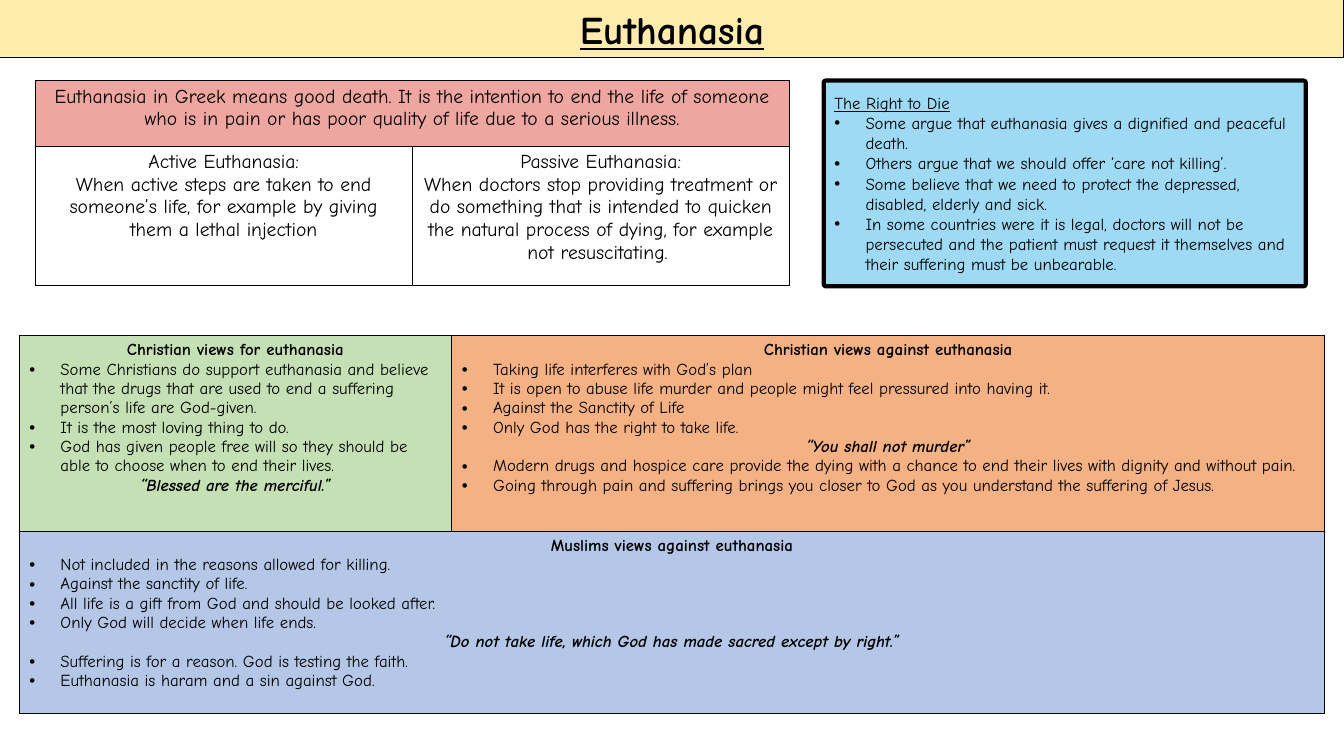
import pptx
import pptx.util
import pptx.dml.color
import pptx.enum.shapes
import pptx.enum.text
import pptx.oxml.ns
import lxml.etree

Inches = pptx.util.Inches
Pt = pptx.util.Pt
RGBColor = pptx.dml.color.RGBColor
ALIGN = pptx.enum.text.PP_ALIGN
ANCHOR = pptx.enum.text.MSO_ANCHOR
SHAPE = pptx.enum.shapes.MSO_SHAPE

FONT = "Comic Neue"
BLACK = RGBColor(0x00, 0x00, 0x00)
WHITE = RGBColor(0xFF, 0xFF, 0xFF)
YELLOW = RGBColor(0xFF, 0xEB, 0xAB)
PINK = RGBColor(0xEE, 0xA7, 0xA0)
SKY = RGBColor(0x9F, 0xDA, 0xF5)
GREEN = RGBColor(0xC5, 0xE0, 0xB4)
ORANGE = RGBColor(0xF4, 0xB1, 0x83)
BLUE = RGBColor(0xB4, 0xC7, 0xE7)

STYLES = {
    "title": dict(center=True, bold=True, underline=True),
    "label": dict(underline=True),
    "plain": dict(center=True),
    "heading": dict(center=True, bold=True),
    "quote": dict(center=True, bold=True, italic=True),
    "point": dict(bullet=True),
}

TITLE = [("title", "Euthanasia")]

RIGHT_TO_DIE = [
    ("label", "The Right to Die"),
    ("point", "Some argue that euthanasia gives a dignified and peaceful death."),
    ("point", "Others argue that we should offer ‘care not killing’."),
    ("point", "Some believe that we need to protect the depressed, disabled, elderly and sick."),
    ("point", "In some countries were it is legal, doctors will not be persecuted and the patient "
              "must request it themselves and their suffering must be unbearable."),
]

DEFINITIONS = {
    "place": (0.35, 0.8),
    "columns": (3.74, 3.74),
    "rows": (0.65, 1.38),
    "size": 14,
    "wide_row": 0,
    "cells": [
        (0, 0, PINK, [
            ("plain", "Euthanasia in Greek means good death. It is the intention to end the life of "
                      "someone who is in pain or has poor quality of life due to a serious illness."),
        ]),
        (1, 0, WHITE, [
            ("plain", "Active Euthanasia:"),
            ("plain", "When active steps are taken to end someone’s life, for example by giving "
                      "them a lethal injection"),
        ]),
        (1, 1, WHITE, [
            ("plain", "Passive Euthanasia:"),
            ("plain", "When doctors stop providing treatment or do something that is intended to "
                      "quicken the natural process of dying, for example not resuscitating. "),
        ]),
    ],
}

VIEWS = {
    "place": (0.19, 3.33),
    "columns": (4.29, 8.66),
    "rows": (1.94, 1.81),
    "size": 12,
    "wide_row": 1,
    "cells": [
        (0, 0, GREEN, [
            ("heading", "Christian views for euthanasia"),
            ("point", "Some Christians do support euthanasia and believe that the drugs that are "
                      "used to end a suffering person’s life are God-given."),
            ("point", "It is the most loving thing to do."),
            ("point", "God has given people free will so they should be able to choose when to end "
                      "their lives."),
            ("quote", "“Blessed are the merciful.”"),
        ]),
        (0, 1, ORANGE, [
            ("heading", "Christian views against euthanasia"),
            ("point", "Taking life interferes with God’s plan"),
            ("point", "It is open to abuse life murder and people might feel pressured into having it."),
            ("point", "Against the Sanctity of Life"),
            ("point", "Only God has the right to take life."),
            ("quote", "“You shall not murder”"),
            ("point", "Modern drugs and hospice care provide the dying with a chance to end their "
                      "lives with dignity and without pain."),
            ("point", "Going through pain and suffering brings you closer to God as you understand "
                      "the suffering of Jesus."),
        ]),
        (1, 0, BLUE, [
            ("heading", "Muslims views against euthanasia"),
            ("point", "Not included in the reasons allowed for killing."),
            ("point", "Against the sanctity of life."),
            ("point", "All life is a gift from God and should be looked after."),
            ("point", "Only God will decide when life ends."),
            ("quote", "“Do not take life, which God has made sacred except by right.”"),
            ("point", "Suffering is for a reason. God is testing the faith."),
            ("point", "Euthanasia is haram and a sin against God."),
        ]),
    ],
}


def add_element(parent, tag, **attributes):
    return lxml.etree.SubElement(parent, pptx.oxml.ns.qn(tag), **attributes)


def write(frame, lines, size):
    frame.word_wrap = True
    frame.text = "\n".join(text for _, text in lines)
    for para, (kind, _) in zip(frame.paragraphs, lines):
        style = STYLES[kind]
        para.alignment = ALIGN.CENTER if style.get("center") else ALIGN.LEFT
        if style.get("bullet"):
            properties = para._p.get_or_add_pPr()
            indent = Inches(0.31)
            properties.set("marL", str(indent))
            properties.set("indent", str(-indent))
            add_element(properties, "a:buFont", typeface="Arial")
            add_element(properties, "a:buChar", char="•")
        for span in para.runs:
            span.font.name = FONT
            span.font.size = Pt(size)
            span.font.color.rgb = BLACK
            span.font.bold = style.get("bold", False)
            span.font.italic = style.get("italic", False)
            span.font.underline = style.get("underline", False)


def add_box(page, kind, place, fill, line_width, lines, size, anchor):
    box = page.shapes.add_shape(kind, *map(Inches, place))
    box.shadow.inherit = False
    box.fill.solid()
    box.fill.fore_color.rgb = fill
    box.line.color.rgb = BLACK
    box.line.width = Pt(line_width)
    box.text_frame.vertical_anchor = anchor
    write(box.text_frame, lines, size)
    return box


def add_borders(cell):
    properties = cell._tc.get_or_add_tcPr()
    for index, side in enumerate(("a:lnL", "a:lnR", "a:lnT", "a:lnB")):
        line = lxml.etree.Element(pptx.oxml.ns.qn(side), w=str(Pt(1)))
        add_element(add_element(line, "a:solidFill"), "a:srgbClr", val=str(BLACK))
        properties.insert(index, line)


def add_grid(page, grid):
    columns, rows = grid["columns"], grid["rows"]
    place = (*grid["place"], sum(columns), sum(rows))
    table = page.shapes.add_table(len(rows), len(columns), *map(Inches, place)).table
    table.first_row = False
    table.horz_banding = False
    for column, width in zip(table.columns, columns):
        column.width = Inches(width)
    for row, height in zip(table.rows, rows):
        row.height = Inches(height)
    wide = grid["wide_row"]
    table.cell(wide, 0).merge(table.cell(wide, len(columns) - 1))
    for row, column, fill, lines in grid["cells"]:
        cell = table.cell(row, column)
        cell.fill.solid()
        cell.fill.fore_color.rgb = fill
        write(cell.text_frame, lines, grid["size"])
    for cell in table.iter_cells():
        add_borders(cell)


def main():
    deck = pptx.Presentation()
    deck.slide_width = Inches(13.33)
    deck.slide_height = Inches(7.5)
    page = deck.slides.add_slide(deck.slide_layouts[6])
    banner = add_box(page, SHAPE.RECTANGLE, (0, 0, 13.33, 0.57), YELLOW, 0.75, TITLE, 28, ANCHOR.TOP)
    banner.text_frame.auto_size = pptx.enum.text.MSO_AUTO_SIZE.SHAPE_TO_FIT_TEXT
    add_grid(page, DEFINITIONS)
    panel = add_box(page, SHAPE.ROUNDED_RECTANGLE, (8.17, 0.8, 4.78, 2.04), SKY, 3,
                    RIGHT_TO_DIE, 12, ANCHOR.MIDDLE)
    panel.adjustments[0] = 0.01
    add_grid(page, VIEWS)
    deck.save("out.pptx")


if __name__ == "__main__":
    main()
